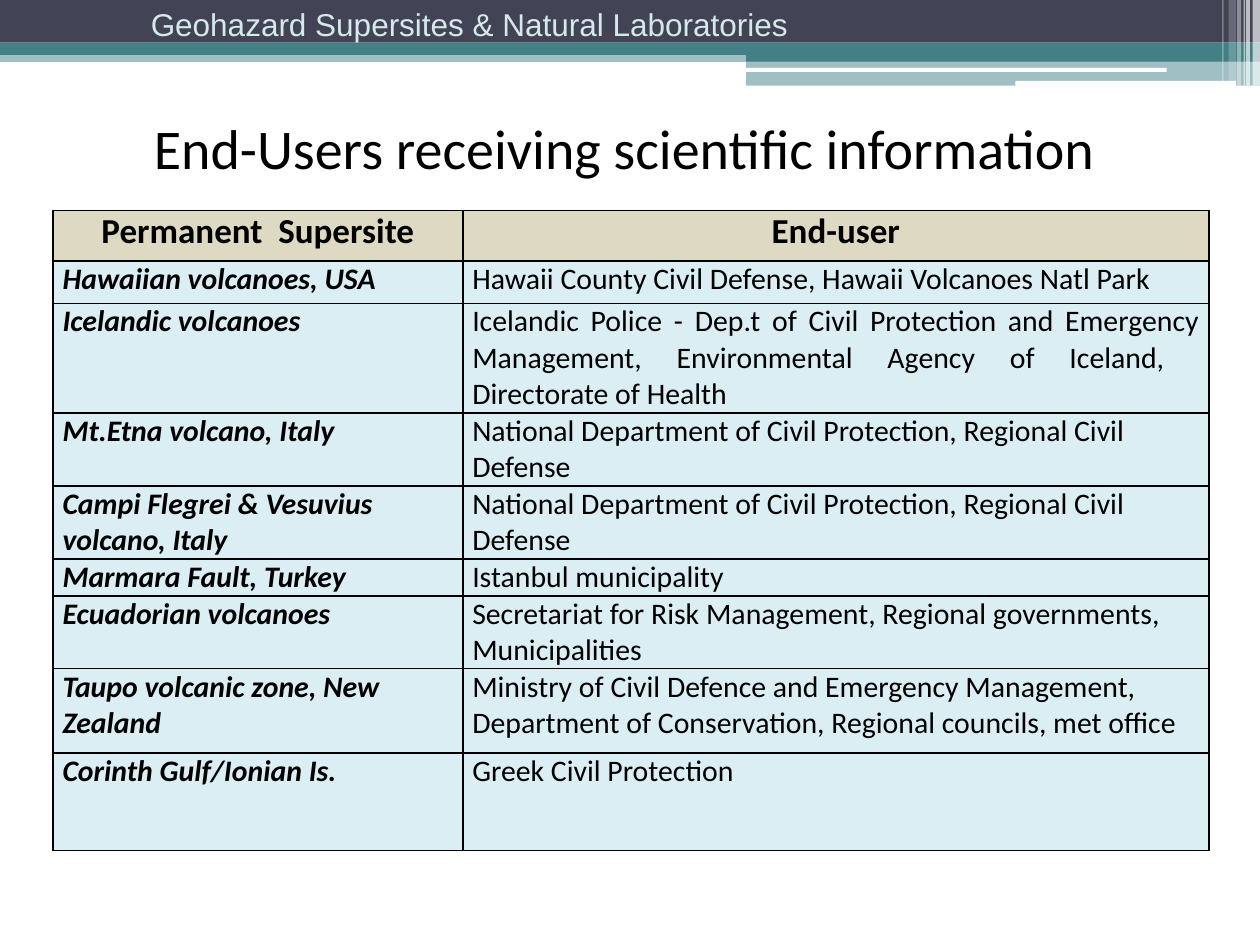
import pptx
import pptx.dml.color
import pptx.enum.shapes
import pptx.enum.text
import pptx.oxml
import pptx.oxml.ns
import pptx.util
from lxml import etree

Cm = pptx.util.Cm
Pt = pptx.util.Pt
ALIGN = pptx.enum.text.PP_ALIGN
SHAPES = pptx.enum.shapes.MSO_SHAPE


def rgb(value):
    return pptx.dml.color.RGBColor.from_string(value)


class SlideBuilder:
    slate, teal, white, black = "424456", "438086", "FFFFFF", "000000"
    pale_teal, sand, sky = "D6E9EA", "DDD9C3", "DAEEF3"

    def __init__(self, slide):
        self.slide = slide

    def bar(self, left, top, width, height, color, opacity=100, rounded=False):
        kind = SHAPES.ROUNDED_RECTANGLE if rounded else SHAPES.RECTANGLE
        shape = self.slide.shapes.add_shape(
            kind, Cm(left), Cm(top), Cm(width), Cm(height))
        shape.shadow.inherit = False
        shape.line.fill.background()
        shape.fill.solid()
        shape.fill.fore_color.rgb = rgb(color)
        if opacity < 100:
            color_node = next(shape.element.spPr.iter(pptx.oxml.ns.qn("a:srgbClr")))
            alpha = etree.SubElement(color_node, pptx.oxml.ns.qn("a:alpha"))
            alpha.set("val", str(opacity * 1000))

    def add_words(self, frame, wording, size, font="Calibri", color=black,
                  align=ALIGN.LEFT, bold=False, italic=False):
        paragraph = frame.paragraphs[0]
        paragraph.alignment = align
        run = paragraph.add_run()
        run.text = wording
        run.font.size = Pt(size)
        run.font.name = font
        run.font.color.rgb = rgb(color)
        run.font.bold = bold
        run.font.italic = italic

    def text(self, left, top, width, height, wording, size, wrap=True,
             anchor=pptx.enum.text.MSO_ANCHOR.TOP, **style):
        box = self.slide.shapes.add_textbox(
            Cm(left), Cm(top), Cm(width), Cm(height))
        box.text_frame.word_wrap = wrap
        box.text_frame.vertical_anchor = anchor
        self.add_words(box.text_frame, wording, size, **style)

    def table(self, left, top, widths, heights):
        grid = self.slide.shapes.add_table(
            len(heights), len(widths), Cm(left), Cm(top),
            Cm(sum(widths)), Cm(sum(heights))).table
        for column, width in zip(grid.columns, widths):
            column.width = Cm(width)
        for row, height in zip(grid.rows, heights):
            row.height = Cm(height)
        return grid

    def cell(self, cell, wording, size, fill, **style):
        cell.margin_left = cell.margin_right = Cm(0.19)
        cell.margin_top = cell.margin_bottom = 0
        cell.fill.solid()
        cell.fill.fore_color.rgb = rgb(fill)
        # Borders come before the fill in the cell properties
        for position, side in enumerate("LRTB"):
            cell._tc.get_or_add_tcPr().insert(position, pptx.oxml.parse_xml(
                f'<a:ln{side} {pptx.oxml.ns.nsdecls("a")} w="12700"><a:solidFill>'
                f'<a:srgbClr val="{self.black}"/></a:solidFill></a:ln{side}>'))
        self.add_words(cell.text_frame, wording, size, **style)


END_USERS = [
    ("Hawaiian volcanoes, USA",
     "Hawaii County Civil Defense, Hawaii Volcanoes Natl Park"),
    ("Icelandic volcanoes",
     "Icelandic Police - Dep.t of Civil Protection and Emergency Management, "
     "Environmental Agency of Iceland,  Directorate of Health"),
    ("Mt.Etna volcano, Italy",
     "National Department of Civil Protection, Regional Civil Defense"),
    ("Campi Flegrei & Vesuvius volcano, Italy",
     "National Department of Civil Protection, Regional Civil Defense"),
    ("Marmara Fault, Turkey", "Istanbul municipality"),
    ("Ecuadorian volcanoes",
     "Secretariat for Risk Management, Regional governments, Municipalities"),
    ("Taupo volcanic zone, New Zealand",
     "Ministry of Civil Defence and Emergency Management, "
     "Department of Conservation, Regional councils, met office"),
    ("Corinth Gulf/Ionian Is.", "Greek Civil Protection"),
]


def main():
    deck = pptx.Presentation()
    deck.slide_width, deck.slide_height = Cm(25.4), Cm(19.05)
    page = SlideBuilder(deck.slides.add_slide(deck.slide_layouts[6]))

    # Banner bands
    page.bar(0, 1.02, 25.4, 0.23, page.teal, 50)
    page.bar(0, 0, 25.4, 0.86, page.slate)
    page.bar(0, 0.86, 25.4, 0.25, page.teal)
    page.bar(15.04, 0.99, 10.36, 0.25, page.teal)
    page.bar(15.04, 1.23, 10.36, 0.5, page.teal, 50)
    page.bar(15.01, 1.37, 8.51, 0.08, page.white, rounded=True)
    page.bar(20.47, 1.63, 4.45, 0.1, page.white, rounded=True)

    # Light stripes at the right edge
    for left, width, height, opacity in [
            (25.25, 0.15, 1.73, 65), (25.12, 0.08, 1.73, 65),
            (25.07, 0.03, 1.73, 60), (24.94, 0.08, 1.73, 40),
            (24.77, 0.15, 1.63, 20), (24.64, 0.03, 1.63, 30)]:
        page.bar(left, 0, width, height, page.white, opacity)

    # Banner text and title
    page.text(2.79, -0.03, 13.79, 1.02,
              "Geohazard Supersites & Natural Laboratories", 18,
              wrap=False, font="Arial", color=page.pale_teal)
    page.text(0.84, 1.7, 23.5, 2.54,
              "End-Users receiving scientific information", 32,
              anchor=pptx.enum.text.MSO_ANCHOR.MIDDLE, align=ALIGN.CENTER)

    # Supersites and their end-users
    supersites = page.table(
        1.07, 4.24, [8.26, 15.04],
        [1.02, 0.86, 2.21, 1.47, 1.47, 0.74, 1.47, 1.7, 1.96])
    for column, heading in enumerate(["Permanent  Supersite", "End-user"]):
        page.cell(supersites.cell(0, column), heading, 20, page.sand,
                  align=ALIGN.CENTER, bold=True)
    for row, (site, users) in enumerate(END_USERS, start=1):
        align = ALIGN.JUSTIFY if site == "Icelandic volcanoes" else ALIGN.LEFT
        page.cell(supersites.cell(row, 0), site, 17, page.sky,
                  bold=True, italic=True)
        page.cell(supersites.cell(row, 1), users, 17, page.sky, align=align)

    deck.save("out.pptx")


if __name__ == "__main__":
    main()
